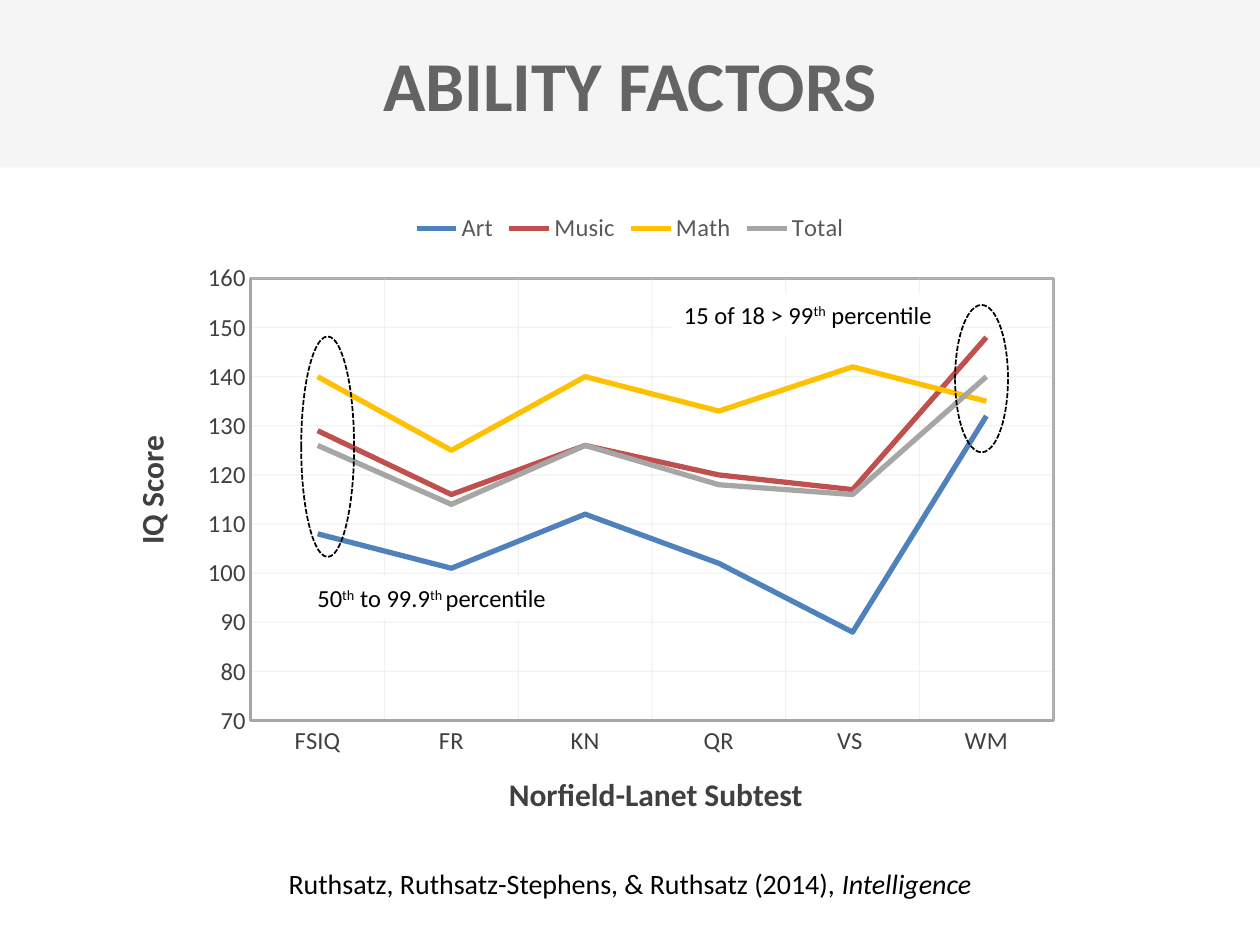
from dataclasses import dataclass

from lxml.etree import SubElement
from pptx import Presentation
from pptx.chart.data import CategoryChartData
from pptx.dml.color import RGBColor
from pptx.enum.chart import XL_CHART_TYPE as ChartType
from pptx.enum.chart import XL_LEGEND_POSITION as LegendPosition
from pptx.enum.chart import XL_TICK_MARK as TickMark
from pptx.enum.dml import MSO_LINE_DASH_STYLE as Dash
from pptx.enum.shapes import MSO_SHAPE as ShapeKind
from pptx.enum.text import MSO_ANCHOR as Anchor
from pptx.enum.text import PP_ALIGN as Align
from pptx.oxml import parse_xml
from pptx.oxml.ns import nsdecls, qn
from pptx.util import Inches, Pt


@dataclass(frozen=True)
class Theme:
    font: str = "Calibri"
    white: str = "FFFFFF"
    black: str = "000000"
    banner: str = "F5F5F5"
    title: str = "646464"
    axis_text: str = "404040"
    legend_text: str = "595959"
    frame: str = "A6A6A6"
    grid: str = "D9D9D9"
    title_size: int = 40
    axis_title_size: int = 18
    citation_size: int = 16
    label_size: int = 14


THEME = Theme()
CATEGORIES = ["FSIQ", "FR", "KN", "QR", "VS ", "WM"]
SERIES = [
    ("Art", "4F81BD", [108, 101, 112, 102, 88, 132]),
    ("Music", "C0504D", [129, 116, 126, 120, 117, 148]),
    ("Math", "FFC000", [140, 125, 140, 133, 142, 135]),
    ("Total", "A6A6A6", [126, 114, 126, 118, 116, 140]),
]


def rgb(value):
    return RGBColor.from_string(value)


def box(left, top, width, height):
    return [Inches(length) for length in (left, top, width, height)]


def style_font(font, size, color, bold=False):
    font.name = THEME.font
    font.size = Pt(size)
    font.bold = bold
    font.color.rgb = rgb(color)


def style_line(line, color, width):
    line.color.rgb = rgb(color)
    line.width = Pt(width)


def add_banner(slide):
    shape = slide.shapes.add_shape(ShapeKind.RECTANGLE, *box(0, 0, 10, 1.33))
    shape.shadow.inherit = False
    shape.fill.solid()
    shape.fill.fore_color.rgb = rgb(THEME.banner)
    shape.line.fill.background()


def add_text(slide, place, runs, size, color=THEME.black, bold=False,
             align=Align.CENTER):
    """Add one paragraph; each run is (text, style), style "", "super" or "italic"."""
    shape = slide.shapes.add_textbox(*box(*place))
    shape.text_frame.word_wrap = True
    paragraph = shape.text_frame.paragraphs[0]
    paragraph.alignment = align
    style_font(paragraph.font, size, color, bold)
    for text, style in runs:
        run = paragraph.add_run()
        run.text = text
        if style == "super":
            run.font._element.set("baseline", "30000")
        elif style == "italic":
            run.font.italic = True
    return shape


def add_note(slide, place, runs):
    shape = add_text(slide, place, runs, THEME.label_size, align=Align.LEFT)
    shape.fill.solid()
    shape.fill.fore_color.rgb = rgb(THEME.white)


def add_dashed_ellipse(slide, place):
    shape = slide.shapes.add_shape(ShapeKind.OVAL, *box(*place))
    shape.shadow.inherit = False
    shape.fill.background()
    style_line(shape.line, THEME.black, 1)
    shape.line.dash_style = Dash.SQUARE_DOT


def style_axis(axis):
    axis.major_tick_mark = axis.minor_tick_mark = TickMark.NONE
    style_font(axis.tick_labels.font, THEME.label_size, THEME.axis_text)
    style_line(axis.format.line, THEME.frame, 1.5)
    axis.has_major_gridlines = True
    style_line(axis.major_gridlines.format.line, THEME.grid, 0.75)


def finish_chart_xml(chart):
    """Set the gridline transparency, plot position, plot frame and chart fill."""
    root = chart.element
    for color in root.xpath(".//c:majorGridlines//a:srgbClr"):
        SubElement(color, qn("a:alpha"), val="32000")

    plot_area = root.xpath(".//c:plotArea")[0]
    for layout in plot_area.findall(qn("c:layout")):
        plot_area.remove(layout)
    settings = [("layoutTarget", "inner"), ("xMode", "edge"), ("yMode", "edge"),
                ("x", 0.07), ("y", 0.14), ("w", 0.91), ("h", 0.78)]
    parts = "".join(f'<c:{name} val="{value}"/>' for name, value in settings)
    plot_area.insert(0, parse_xml(
        f'<c:layout {nsdecls("c")}><c:manualLayout>{parts}</c:manualLayout></c:layout>'))
    plot_area.append(parse_xml(
        f'<c:spPr {nsdecls("c", "a")}><a:noFill/><a:ln w="{Pt(1.5)}"><a:solidFill>'
        f'<a:srgbClr val="{THEME.frame}"/></a:solidFill></a:ln></c:spPr>'))
    root.find(qn("c:txPr")).addprevious(parse_xml(
        f'<c:spPr {nsdecls("c", "a")}><a:solidFill><a:srgbClr val="{THEME.white}"/>'
        '</a:solidFill><a:ln><a:noFill/></a:ln></c:spPr>'))


def add_score_chart(slide):
    data = CategoryChartData()
    data.categories = CATEGORIES
    for name, _, values in SERIES:
        data.add_series(name, values)
    chart = slide.shapes.add_chart(ChartType.LINE, *box(1.5, 1.58, 7, 4.5), data).chart
    style_font(chart.font, 10, THEME.black)
    chart.has_title = False

    # Legend
    chart.has_legend = True
    chart.legend.position = LegendPosition.TOP
    chart.legend.include_in_layout = False
    style_font(chart.legend.font, THEME.label_size, THEME.legend_text)

    # Axes
    style_axis(chart.category_axis)
    style_axis(chart.value_axis)
    chart.value_axis.minimum_scale = 70
    chart.value_axis.maximum_scale = 160
    chart.value_axis.major_unit = 10

    # Lines
    for series, (_, color, _) in zip(chart.plots[0].series, SERIES):
        series.smooth = False
        style_line(series.format.line, color, 3)
    finish_chart_xml(chart)


def main():
    presentation = Presentation()
    presentation.slide_width, presentation.slide_height = Inches(10), Inches(7.5)
    slide = presentation.slides.add_slide(presentation.slide_layouts[6])

    # Title
    add_banner(slide)
    title = add_text(slide, (1.04, 0.44, 7.92, 0.45), [("ABILITY FACTORS", "")],
                     THEME.title_size, THEME.title, bold=True)
    title.text_frame.vertical_anchor = Anchor.MIDDLE

    # Chart and axis titles
    add_score_chart(slide)
    add_text(slide, (2.08, 6.1, 6.25, 0.4), [("Norfield-Lanet Subtest", "")],
             THEME.axis_title_size, THEME.axis_text, bold=True)
    score_title = add_text(slide, (-0.51, 3.69, 3.42, 0.4), [("IQ Score", "")],
                           THEME.axis_title_size, THEME.axis_text, bold=True)
    score_title.rotation = 270

    # Highlighted scores
    add_dashed_ellipse(slide, (7.58, 2.42, 0.42, 1.17))
    add_dashed_ellipse(slide, (2.39, 2.67, 0.42, 1.75))
    add_note(slide, (5.33, 2.33, 2.25, 0.34),
             [("15 of 18 > 99", ""), ("th", "super"), (" percentile", "")])
    add_note(slide, (2.42, 4.58, 2.12, 0.34),
             [("50", ""), ("th", "super"), (" to 99.9", ""), ("th ", "super"),
              ("percentile", "")])

    # Citation
    add_text(slide, (0, 6.83, 10, 0.37),
             [("Ruthsatz, Ruthsatz-Stephens, & Ruthsatz (2014), ", ""),
              ("Intelligence", "italic")], THEME.citation_size)

    presentation.save("out.pptx")


if __name__ == "__main__":
    main()
